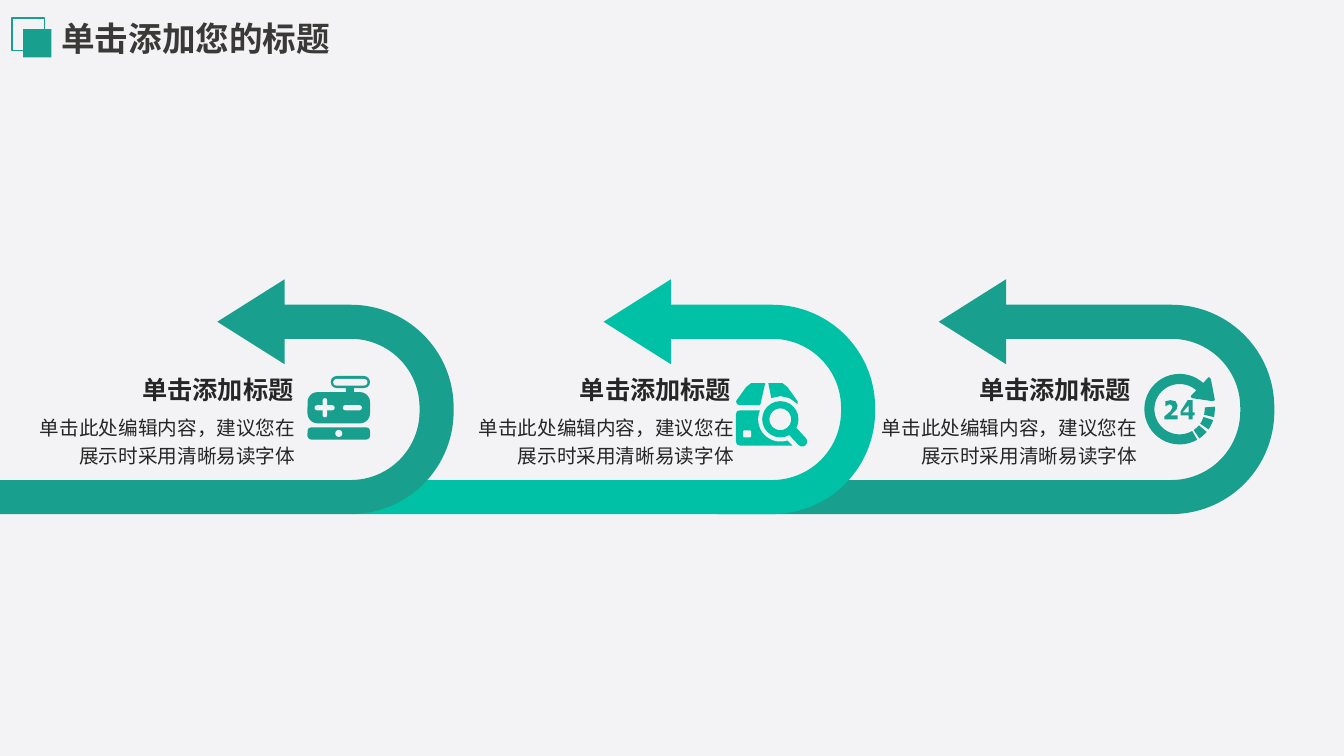
import dataclasses
import typing

import pptx
import pptx.dml.color
import pptx.enum.shapes
import pptx.enum.text
import pptx.util

SHAPE = pptx.enum.shapes.MSO_SHAPE
ALIGN = pptx.enum.text.PP_ALIGN


@dataclasses.dataclass(frozen=True)
class Theme:
    teal: str = "199F8E"
    mint: str = "00C1A5"
    paper: str = "F3F3F5"
    ink: str = "262626"
    title_ink: str = "3B3838"
    font: str = "Arial"
    title_size: int = 24
    heading_size: int = 18
    body_size: int = 14


@dataclasses.dataclass(frozen=True)
class Step:
    """Horizontal places in grid cells of one arrow and what it encloses."""
    arrow_left: int
    arrow_length: int
    arrow_rise: float
    body_left: int
    heading_overhang: int
    icon_box: tuple
    draw_icon: typing.Callable
    color: str


THEME = Theme()
SLIDE_COLUMNS, SLIDE_ROWS = 1333, 750
ARROW_TOP, ARROW_HEIGHT = 277, 233
HEADING_TOP, HEADING_WIDTH, HEADING_HEIGHT = 366, 205, 40
BODY_TOP, BODY_WIDTH, BODY_HEIGHT = 408, 261, 55


def cells(count):
    """Length of a number of grid cells; a cell is a hundredth of an inch."""
    return pptx.util.Inches(count / 100)


def rgb(color):
    return pptx.dml.color.RGBColor.from_string(color)


def paint(shape, color):
    shape.shadow.inherit = False
    shape.fill.solid()
    shape.fill.fore_color.rgb = rgb(color)
    shape.line.fill.background()


def add_preset(slide, kind, origin, box, color, adjustments=(), rotation=0):
    left, top, width, height = box
    shape = slide.shapes.add_shape(kind, cells(origin[0] + left), cells(origin[1] + top),
                                   cells(width), cells(height))
    for index, value in enumerate(adjustments):
        shape.adjustments[index] = value
    shape.rotation = rotation
    paint(shape, color)
    return shape


def add_outline(slide, origin, color, *contours):
    """Filled polygon; a contour inside another is a hole."""
    points = [[(cells(origin[0] + x), cells(origin[1] + y)) for x, y in contour]
              for contour in contours]
    builder = slide.shapes.build_freeform(*points[0][0])
    builder.add_line_segments(points[0][1:])
    for contour in points[1:]:
        builder.move_to(*contour[0])
        builder.add_line_segments(contour[1:])
    paint(builder.convert_to_shape(), color)


def add_text(slide, box, text, size, color, bold=False, align=ALIGN.LEFT):
    text_frame = slide.shapes.add_textbox(*map(cells, box)).text_frame
    text_frame.word_wrap = True
    text_frame.text = text
    paragraph = text_frame.paragraphs[0]
    paragraph.alignment = align
    font = paragraph.runs[0].font
    font.name, font.size, font.bold = THEME.font, pptx.util.Pt(size), bold
    font.color.rgb = rgb(color)
    return text_frame


def draw_battery(slide, origin, color):
    for kind, box, fill, adjustments in (
            (SHAPE.ROUNDED_RECTANGLE, (23, 0, 39, 12), color, (0.5,)),
            (SHAPE.ROUNDED_RECTANGLE, (25.5, 3, 34, 6.5), THEME.paper, (0.5,)),
            (SHAPE.RECTANGLE, (38, 11, 8, 6), color, ()),
            (SHAPE.ROUNDED_RECTANGLE, (0, 16, 62, 31), color, (0.32,)),
            (SHAPE.ROUNDED_RECTANGLE, (7, 29, 20, 5), THEME.paper, (0.5,)),
            (SHAPE.ROUNDED_RECTANGLE, (15, 22, 4.5, 19), THEME.paper, (0.5,)),
            (SHAPE.ROUNDED_RECTANGLE, (35, 29, 19, 5), THEME.paper, (0.5,)),
            (SHAPE.ROUNDED_RECTANGLE, (0, 51, 62, 12), color, (0.3,)),
            (SHAPE.OVAL, (27.5, 53.5, 7, 7), THEME.paper, ())):
        add_preset(slide, kind, origin, box, fill, adjustments)


def draw_parcel_search(slide, origin, color):
    left_flap = [(4, 22), (24, 22), (29, 0), (15, 0), (10, 4), (0, 18), (1, 21)]
    right_flap = [(61, 21), (61, 18), (51, 4), (46, 0), (32, 0), (35, 15), (44, 13), (53, 15)]
    parcel = [(4, 27), (44, 27), (44, 50), (56, 62), (4, 62), (1, 61), (0, 58), (0, 31), (1, 28)]
    for contour in (left_flap, right_flap, parcel):
        add_outline(slide, origin, color, contour)
    add_preset(slide, SHAPE.ROUNDED_RECTANGLE, origin, (7, 47, 8, 7), THEME.paper, (0.2,))
    add_preset(slide, SHAPE.OVAL, origin, (22, 14, 44, 44), THEME.paper)
    add_preset(slide, SHAPE.DONUT, origin, (26, 18, 36, 36), color, (0.2,))
    add_preset(slide, SHAPE.ROUNDED_RECTANGLE, origin, (48, 47.5, 25, 10), color, (0.5,), 47)


def draw_round_the_clock(slide, origin, color):
    for start, end in ((60, 315), (-4, 13), (18, 35), (40, 56)):
        # Angles are stored in 60000ths of a degree, adjustments in 100000ths
        add_preset(slide, SHAPE.BLOCK_ARC, origin, (0, 0, 70, 70), color,
                   (start % 360 * 0.6, end * 0.6, 0.143))
    add_outline(slide, origin, color, [(64, 3), (66, 5), (70, 26), (68, 27), (47, 24), (46, 22)])
    digit_two = [(33, 45), (20, 45), (20, 42), (26, 37), (28, 33), (27, 31), (25, 30),
                 (21, 32), (21, 27), (26, 26), (31, 27), (33, 31), (32, 35), (26, 41), (33, 41)]
    digit_four = [(50, 41), (48, 41), (48, 45), (44, 45), (44, 41), (36, 41), (36, 37),
                  (43, 26), (48, 26), (48, 38), (50, 38)]
    add_outline(slide, origin, color, digit_two)
    add_outline(slide, origin, color, digit_four, [(44, 38), (44, 31), (38, 38)])


def draw_title(slide, left, top):
    origin = (left, top)
    add_preset(slide, SHAPE.RECTANGLE, origin, (11, 11, 28, 28), THEME.teal)
    frame = add_preset(slide, SHAPE.RECTANGLE, origin, (0, 0, 32, 32), THEME.teal)
    frame.fill.background()
    frame.line.color.rgb = rgb(THEME.teal)
    frame.line.width = pptx.util.Pt(1)
    add_text(slide, (left + 39, top - 5, 325, 50), "单击添加您的标题",
             THEME.title_size, THEME.title_ink, bold=True)


def draw_arrow(slide, step):
    """The preset points down, so its upright box is turned around its centre."""
    left = step.arrow_left + (step.arrow_length - ARROW_HEIGHT) / 2
    top = ARROW_TOP + (ARROW_HEIGHT - step.arrow_length) / 2
    arrow = add_preset(slide, SHAPE.U_TURN_ARROW, (left, top),
                       (0, 0, ARROW_HEIGHT, step.arrow_length), step.color,
                       (0.145, 0.181, 0.287, 0.438, step.arrow_rise), 90)
    arrow.element.spPr.xfrm.set("flipH", "1")


def draw_step_content(slide, step):
    step.draw_icon(slide, step.icon_box, step.color)
    heading_left = step.body_left + BODY_WIDTH + step.heading_overhang - HEADING_WIDTH
    add_text(slide, (heading_left, HEADING_TOP, HEADING_WIDTH, HEADING_HEIGHT), "单击添加标题",
             THEME.heading_size, THEME.ink, bold=True, align=ALIGN.RIGHT)
    body = add_text(slide, (step.body_left, BODY_TOP, BODY_WIDTH, BODY_HEIGHT),
                    "单击此处编辑内容，建议您在展示时采用清晰易读字体",
                    THEME.body_size, THEME.ink, align=ALIGN.RIGHT)
    body.margin_left = body.margin_top = body.margin_right = body.margin_bottom = 0
    body.paragraphs[0].line_spacing = 1.2
    body.paragraphs[0].space_after = pptx.util.Pt(6)


def main():
    presentation = pptx.Presentation()
    presentation.slide_width = cells(SLIDE_COLUMNS)
    presentation.slide_height = cells(SLIDE_ROWS)
    slide = presentation.slides.add_slide(presentation.slide_layouts[6])
    slide.background.fill.solid()
    slide.background.fill.fore_color.rgb = rgb(THEME.paper)

    steps = (
        Step(0, 450, 0.521, 32, 8, (305, 373), draw_battery, THEME.teal),
        Step(350, 518, 0.52, 467, 7, (730, 380), draw_parcel_search, THEME.mint),
        Step(711, 553, 0.602, 867, 3, (1135, 371), draw_round_the_clock, THEME.teal),
    )
    draw_title(slide, 12, 18)
    for step in reversed(steps):
        draw_arrow(slide, step)
    for step in steps:
        draw_step_content(slide, step)
    presentation.save("out.pptx")


if __name__ == "__main__":
    main()
